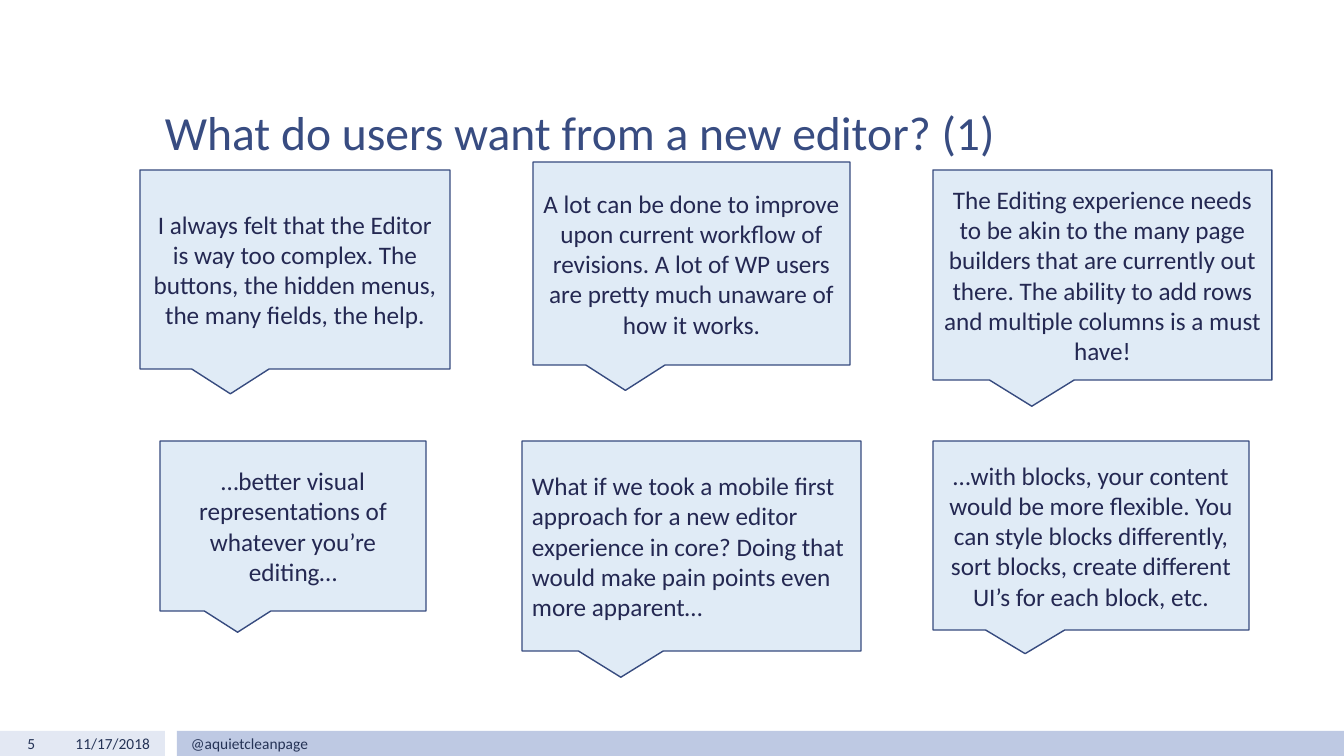
import pptx
import pptx.dml.color
import pptx.enum.shapes
import pptx.enum.text
import pptx.util
from dataclasses import dataclass

PX = pptx.util.Inches(1) / 100.8
ALIGN = pptx.enum.text.PP_ALIGN
ANCHOR = pptx.enum.text.MSO_ANCHOR
SHAPE = pptx.enum.shapes.MSO_SHAPE


@dataclass(frozen=True)
class Theme:
    font: str = "Calibri"
    title_size: int = 34
    quote_size: int = 18
    footer_size: int = 11
    title: str = "384C81"
    quote: str = "242852"
    footer: str = "253356"
    callout: str = "E0EBF6"
    outline: str = "374B7F"
    footer_left: str = "E3E8F3"
    footer_right: str = "BEC9E3"


THEME = Theme()
FOOTER_TOP, FOOTER_HEIGHT = 731, 25
LOWER_ROW = 441

# left, top, width, height, alignment, words
QUOTES = [
    (140, 170, 310, 199, ALIGN.CENTER,
     "I always felt that the Editor is way too complex. The buttons, "
     "the hidden menus, the many fields, the help."),
    (533, 162, 317, 203, ALIGN.CENTER,
     "A lot can be done to improve upon current workflow of revisions. "
     "A lot of WP users are pretty much unaware of how it works."),
    (933, 170, 339, 210, ALIGN.CENTER,
     "The Editing experience needs to be akin to the many page builders "
     "that are currently out there. The ability to add rows and multiple "
     "columns is a must have!"),
    (160, LOWER_ROW, 266, 170, ALIGN.CENTER,
     "…better visual representations of whatever you’re editing…"),
    (522, LOWER_ROW, 339, 210, ALIGN.LEFT,
     "What if we took a mobile first approach for a new editor experience "
     "in core? Doing that would make pain points even more apparent…"),
    (933, LOWER_ROW, 316, 189, ALIGN.CENTER,
     "…with blocks, your content would be more flexible. You can style "
     "blocks differently, sort blocks, create different UI’s for each "
     "block, etc."),
]


def emu(*lengths):
    return [round(length * PX) for length in lengths]


def rgb(code):
    return pptx.dml.color.RGBColor.from_string(code)


def write(frame, text, *, size, color, align=ALIGN.LEFT, anchor=ANCHOR.MIDDLE):
    frame.word_wrap = True
    frame.vertical_anchor = anchor
    paragraph = frame.paragraphs[0]
    paragraph.alignment = align
    run = paragraph.add_run()
    run.text = text
    run.font.name = THEME.font
    run.font.size = pptx.util.Pt(size)
    run.font.color.rgb = rgb(color)


def add_label(slide, box, text, **text_format):
    label = slide.shapes.add_textbox(*emu(*box))
    write(label.text_frame, text, **text_format)
    return label


def add_filled(slide, kind, box, fill, outline=None):
    shape = slide.shapes.add_shape(kind, *emu(*box))
    shape.shadow.inherit = False
    shape.fill.solid()
    shape.fill.fore_color.rgb = rgb(fill)
    if outline:
        shape.line.color.rgb = rgb(outline)
        shape.line.width = pptx.util.Pt(1)
    else:
        shape.line.fill.background()
    return shape


def add_quote(slide, box, text, align):
    callout = add_filled(slide, SHAPE.RECTANGULAR_CALLOUT, box,
                         THEME.callout, THEME.outline)
    write(callout.text_frame, text, size=THEME.quote_size,
          color=THEME.quote, align=align)


def add_footer(slide):
    for left, width, fill in [(0, 165, THEME.footer_left),
                              (177, 1167, THEME.footer_right)]:
        add_filled(slide, SHAPE.RECTANGLE,
                   (left, FOOTER_TOP, width, FOOTER_HEIGHT), fill)
    for left, width, text, align in [
        (0, 45, "5", ALIGN.RIGHT),
        (50, 110, "11/17/2018", ALIGN.RIGHT),
        (181, 1008, "@aquietcleanpage", ALIGN.LEFT),
    ]:
        add_label(slide, (left, FOOTER_TOP, width, FOOTER_HEIGHT), text,
                  size=THEME.footer_size, color=THEME.footer, align=align)


def main():
    deck = pptx.Presentation()
    deck.slide_width, deck.slide_height = emu(1344, 756)
    slide = deck.slides.add_slide(deck.slide_layouts[6])
    add_footer(slide)
    heading = add_label(slide, (155, 30, 1033, 130),
                        "What do users want from a new editor? (1)",
                        size=THEME.title_size, color=THEME.title,
                        anchor=ANCHOR.BOTTOM)
    heading.text_frame.margin_bottom = 0
    for *box, align, text in QUOTES:
        add_quote(slide, box, text, align)
    deck.save("out.pptx")


if __name__ == "__main__":
    main()
